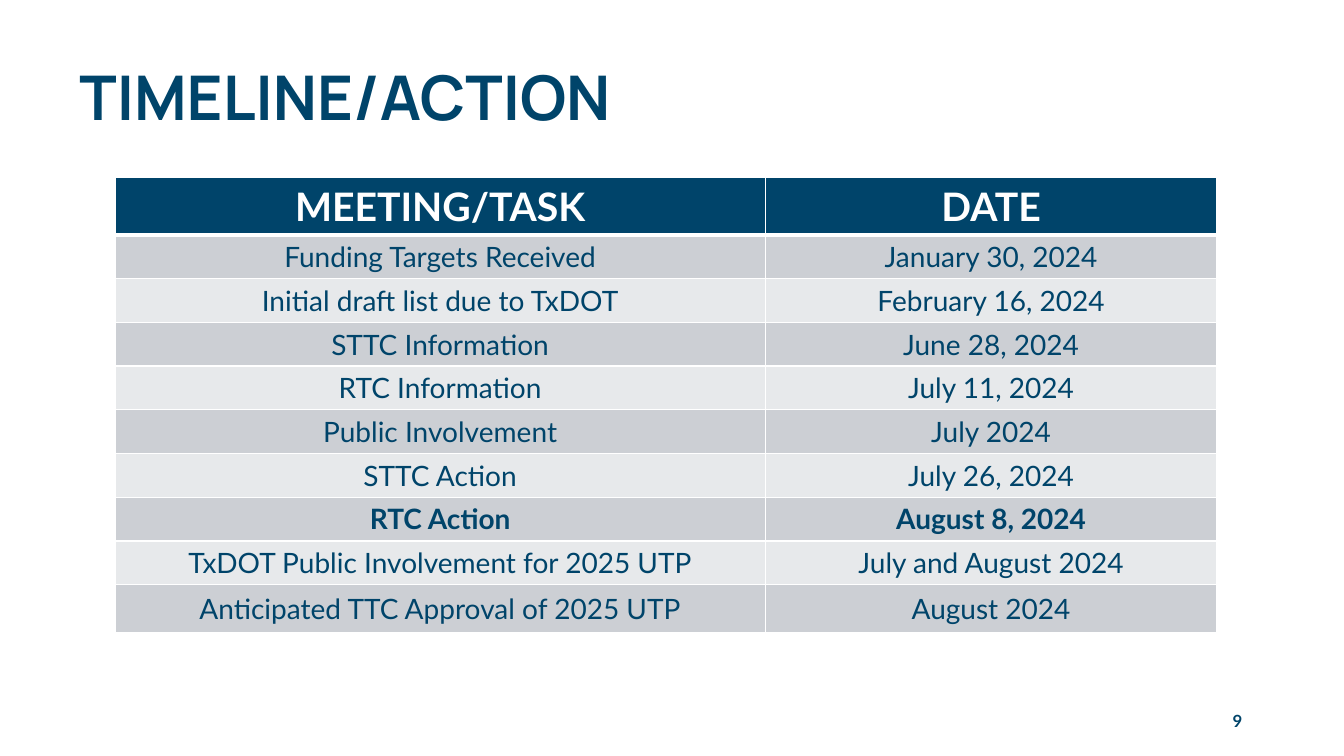
from dataclasses import dataclass

from lxml.etree import SubElement
from pptx import Presentation
from pptx.dml.color import RGBColor
from pptx.enum.text import MSO_ANCHOR, PP_ALIGN
from pptx.oxml.ns import qn
from pptx.util import Inches, Pt


@dataclass(frozen=True)
class Theme:
    navy: str = "00446A"
    white: str = "FFFFFF"
    bands: tuple = ("CCCFD4", "E7E9EB")
    heading_font: str = "Manrope"
    body_font: str = "Lato"
    title_size: int = 44
    header_size: int = 28
    body_size: int = 20
    number_size: int = 12


THEME = Theme()
HEADERS = ("MEETING/TASK", "DATE")
TIMELINE = (
    ("Funding Targets Received", "January 30, 2024"),
    ("Initial draft list due to TxDOT", "February 16, 2024"),
    ("STTC Information", "June 28, 2024"),
    ("RTC Information", "July 11, 2024"),
    ("Public Involvement", "July 2024"),
    ("STTC Action", "July 26, 2024"),
    ("RTC Action", "August 8, 2024"),
    ("TxDOT Public Involvement for 2025 UTP", "July and August 2024"),
    ("Anticipated TTC Approval of 2025 UTP", "August 2024"),
)
KEY_TASK = "RTC Action"
COLUMN_WIDTHS = (6.45, 4.48)
ROW_HEIGHTS = (0.57, *[0.43] * (len(TIMELINE) - 1), 0.48)


def set_attributes(target, values):
    for name, value in values.items():
        setattr(target, name, value)


def write_text(frame, text, size, align, color=THEME.navy, bold=True, font=THEME.body_font):
    para = frame.paragraphs[0]
    para.alignment = align
    span = para.add_run()
    span.text = text
    set_attributes(span.font, {"name": font, "size": Pt(size), "bold": bold})
    span.font.color.rgb = RGBColor.from_string(color)
    return para


def add_text(page, area, text, size, align, **style):
    box = page.shapes.add_textbox(*map(Inches, area))
    set_attributes(box.text_frame, {"word_wrap": True, "vertical_anchor": MSO_ANCHOR.MIDDLE})
    return write_text(box.text_frame, text, size, align, **style)


def add_borders(cell, bottom_width):
    properties = cell._tc.get_or_add_tcPr()
    widths = {"a:lnL": 1, "a:lnR": 1, "a:lnT": 1, "a:lnB": bottom_width}
    for position, (tag, width) in enumerate(widths.items()):
        line = SubElement(properties, qn(tag), w=str(Pt(width)))
        fill = SubElement(line, qn("a:solidFill"))
        SubElement(fill, qn("a:srgbClr"), val=THEME.white)
        properties.insert(position, line)


def format_cell(cell, text, size, color, bold, fill, bottom_width):
    cell.vertical_anchor = MSO_ANCHOR.MIDDLE
    write_text(cell.text_frame, text, size, PP_ALIGN.CENTER, color=color, bold=bold)
    cell.fill.solid()
    cell.fill.fore_color.rgb = RGBColor.from_string(fill)
    add_borders(cell, bottom_width)


def add_timeline(page, left, top):
    area = map(Inches, (left, top, sum(COLUMN_WIDTHS), sum(ROW_HEIGHTS)))
    table = page.shapes.add_table(len(ROW_HEIGHTS), len(COLUMN_WIDTHS), *area).table
    for column, width in zip(table.columns, COLUMN_WIDTHS):
        column.width = Inches(width)
    for row, height in zip(table.rows, ROW_HEIGHTS):
        row.height = Inches(height)
    for cell, text in zip(table.rows[0].cells, HEADERS):
        format_cell(cell, text, THEME.header_size, THEME.white, True, THEME.navy, 3)
    for index, entry in enumerate(TIMELINE):
        fill = THEME.bands[index % len(THEME.bands)]
        bold = entry[0] == KEY_TASK
        for cell, text in zip(table.rows[index + 1].cells, entry):
            format_cell(cell, text, THEME.body_size, THEME.navy, bold, fill, 1)
    for cell in table.rows[1].cells:
        cell._tc.tcPr.find(qn("a:lnT")).set("w", str(Pt(3)))


def main():
    deck = Presentation()
    set_attributes(deck, {"slide_width": Inches(13.33), "slide_height": Inches(7.5)})
    page = deck.slides.add_slide(deck.slide_layouts[6])
    title = add_text(page, (0.69, 0.57, 10.8, 0.85), "TIMELINE/ACTION",
                     THEME.title_size, PP_ALIGN.LEFT, font=THEME.heading_font)
    title.line_spacing = 0.9
    add_timeline(page, 1.14, 1.76)
    add_text(page, (9.42, 6.95, 3, 0.4), "9", THEME.number_size, PP_ALIGN.RIGHT)
    deck.save("out.pptx")


if __name__ == "__main__":
    main()
